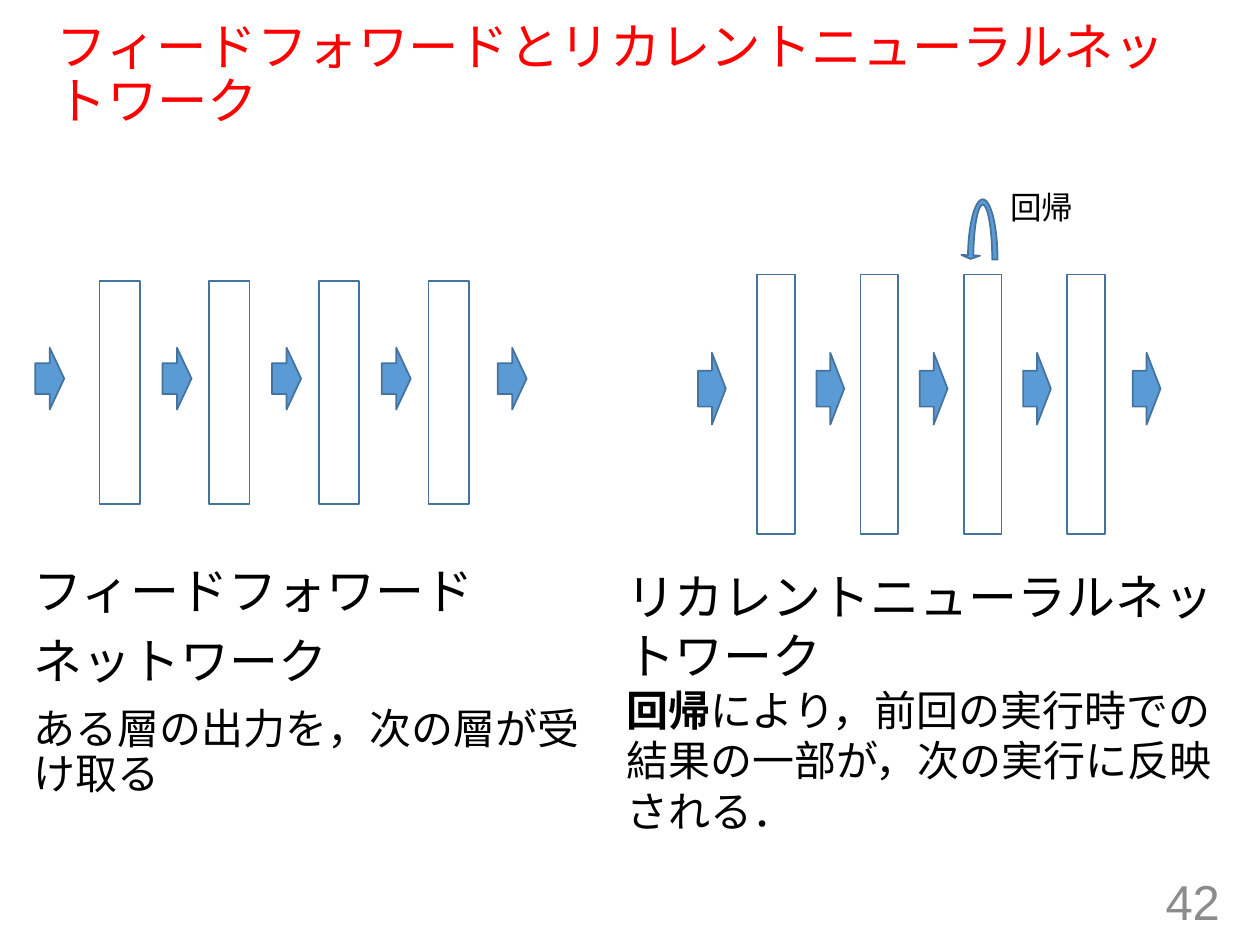
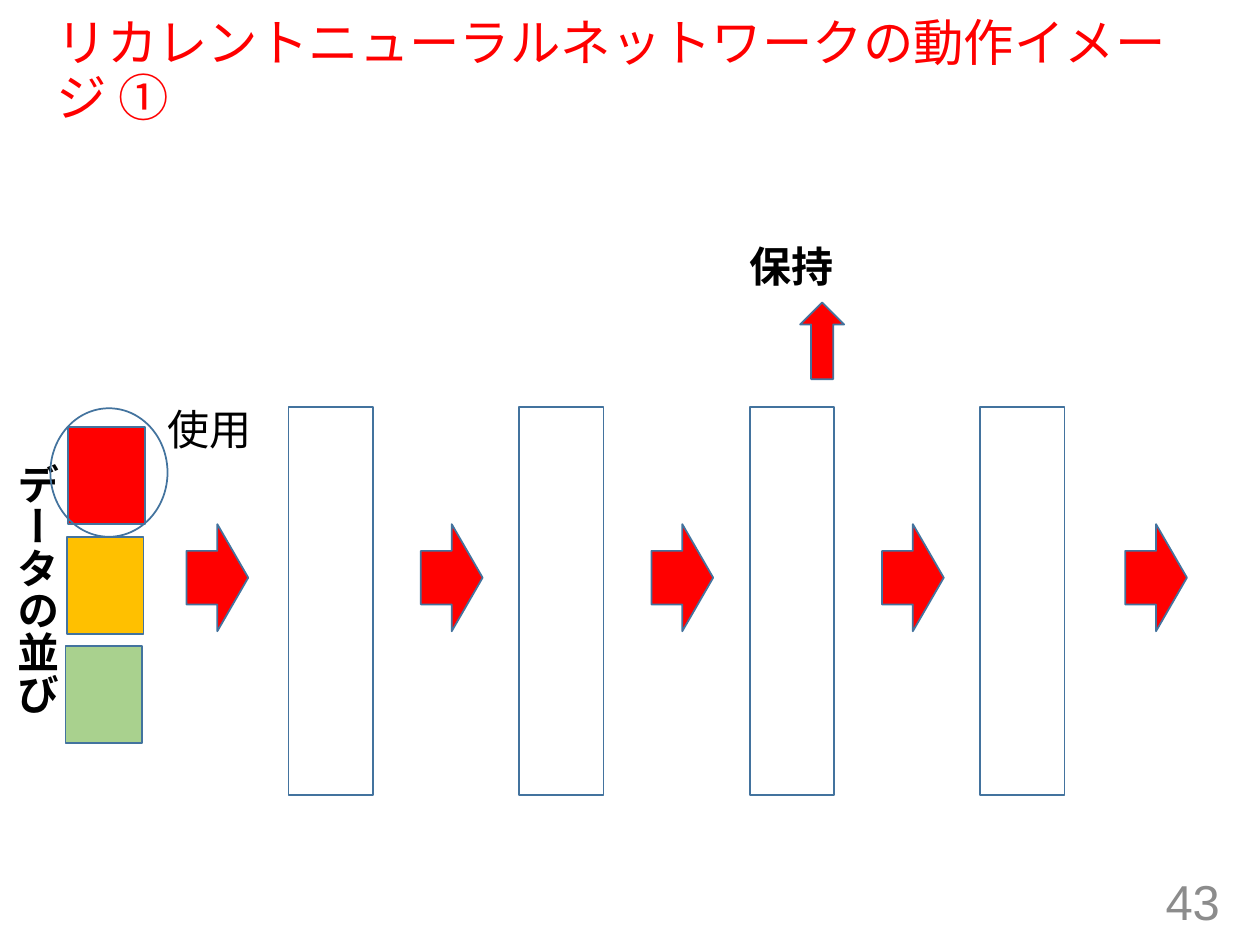
from dataclasses import dataclass

from lxml.etree import SubElement
from pptx import Presentation
from pptx.dml.color import RGBColor
from pptx.enum.shapes import MSO_SHAPE
from pptx.enum.text import MSO_ANCHOR, MSO_AUTO_SIZE, PP_ALIGN
from pptx.oxml.ns import qn
from pptx.util import Inches, Pt

RED = RGBColor(0xFF, 0x00, 0x00)
BLUE = RGBColor(0x5B, 0x9B, 0xD5)
OUTLINE = RGBColor(0x43, 0x73, 0x9E)
AMBER = RGBColor(0xFF, 0xC0, 0x00)
GREEN = RGBColor(0xA9, 0xD1, 0x8E)
BLACK = RGBColor(0x00, 0x00, 0x00)
GRAY = RGBColor(0x8C, 0x8C, 0x8C)

HEADING_FONT = "Arial"
BODY_FONT = "Calibri"
JAPANESE_FONT = "Noto Sans CJK JP"

COLUMNS, ROWS = 100, 75
CELL = Inches(0.1)
LAYER_COUNT = 4


@dataclass
class Words:
    text: str
    size: float
    font: str = BODY_FONT
    bold: bool = False
    color: RGBColor = BLACK


@dataclass
class Network:
    first_layer: float
    pitch: float
    layer_top: float
    layer_size: tuple
    input_arrow: float
    first_inner_arrow: float
    output_arrow: float
    arrow_top: float
    arrow_size: tuple
    arrow_color: RGBColor


def cells(*counts):
    return [round(count * CELL) for count in counts]


def format_run(run, words):
    font = run.font
    font.size = Pt(words.size)
    font.name = words.font
    font.bold = words.bold
    font.color.rgb = words.color
    SubElement(font._element, qn("a:ea")).set("typeface", JAPANESE_FONT)


def fill_paragraph(paragraph, runs):
    for words in runs:
        run = paragraph.add_run()
        run.text = words.text
        format_run(run, words)


def add_text(slide, place, paragraphs, wrap=True):
    text_frame = slide.shapes.add_textbox(*cells(*place)).text_frame
    text_frame.word_wrap = wrap
    for index, runs in enumerate(paragraphs):
        paragraph = text_frame.add_paragraph() if index else text_frame.paragraphs[0]
        fill_paragraph(paragraph, runs)
    return text_frame


def add_label(slide, place, words):
    text_frame = add_text(slide, place, [[words]], wrap=False)
    text_frame.auto_size = MSO_AUTO_SIZE.SHAPE_TO_FIT_TEXT
    return text_frame


def add_outlined(slide, kind, place, color=None):
    shape = slide.shapes.add_shape(kind, *cells(*place))
    shape.shadow.inherit = False
    shape.line.color.rgb = OUTLINE
    shape.line.width = Pt(1)
    if color is None:
        shape.fill.background()
    else:
        shape.fill.solid()
        shape.fill.fore_color.rgb = color
    return shape


def add_network(slide, network):
    for index in range(LAYER_COUNT):
        left = network.first_layer + index * network.pitch
        add_outlined(slide, MSO_SHAPE.RECTANGLE,
                     (left, network.layer_top, *network.layer_size))
    inner_arrows = [network.first_inner_arrow + index * network.pitch
                    for index in range(LAYER_COUNT - 1)]
    for left in [network.input_arrow, *inner_arrows, network.output_arrow]:
        add_outlined(slide, MSO_SHAPE.RIGHT_ARROW,
                     (left, network.arrow_top, *network.arrow_size),
                     network.arrow_color)


def add_recurrence(slide, place):
    shape = add_outlined(slide, MSO_SHAPE.CIRCULAR_ARROW, place, BLUE)
    for index, value in enumerate((0.125, 9.927, 204.577, 108, 0.217)):
        shape.adjustments[index] = value
    shape._element.spPr.xfrm.set("flipH", "1")


def add_titled_slide(presentation, title_text, title_rows, number):
    slide = presentation.slides.add_slide(presentation.slide_layouts[5])
    title = slide.shapes.title
    title.left, title.top, title.width, title.height = cells(3.5, 1.9, 92.5, title_rows)
    text_frame = title.text_frame
    text_frame.text = title_text
    text_frame.word_wrap = True
    text_frame.auto_size = MSO_AUTO_SIZE.NONE
    text_frame.vertical_anchor = MSO_ANCHOR.MIDDLE
    paragraph = text_frame.paragraphs[0]
    paragraph.alignment = PP_ALIGN.LEFT
    paragraph.line_spacing = 0.9
    format_run(paragraph.runs[0], Words(title_text, 28.8, HEADING_FONT, color=RED))

    number_frame = add_text(slide, (75.3, 69.5, 22.5, 4),
                            [[Words(number, 28, HEADING_FONT, color=GRAY)]])
    number_frame.vertical_anchor = MSO_ANCHOR.MIDDLE
    number_frame.paragraphs[0].alignment = PP_ALIGN.RIGHT
    return slide


def build_comparison(presentation):
    slide = add_titled_slide(
        presentation, "フィードフォワードとリカレントニューラルネットワーク", 8.3, "42")
    description = add_text(slide, (1.7, 44.5, 48.3, 20.3), [
        [Words("フィードフォワード", 28, HEADING_FONT)],
        [Words("ネットワーク", 28, HEADING_FONT)],
        [Words("ある層の出力を，次の層が受け取る", 24, JAPANESE_FONT)],
    ])
    for paragraph in description.paragraphs:
        paragraph.line_spacing = 0.9
        paragraph.space_before = Pt(10)

    add_network(slide, Network(
        first_layer=7.9, pitch=8.7, layer_top=22.3, layer_size=(3.2, 17.7),
        input_arrow=2.8, first_inner_arrow=12.9, output_arrow=39.5,
        arrow_top=27.6, arrow_size=(2.3, 4.9), arrow_color=BLUE))
    add_network(slide, Network(
        first_layer=60.1, pitch=8.2, layer_top=21.8, layer_size=(3, 20.6),
        input_arrow=55.4, first_inner_arrow=64.8, output_arrow=89.9,
        arrow_top=28, arrow_size=(2.2, 5.7), arrow_color=BLUE))
    add_recurrence(slide, (76.3, 15.3, 3.4, 10.6))

    add_text(slide, (48.7, 44.5, 50.1, 26.6), [
        [Words("リカレントニューラルネットワーク", 28, JAPANESE_FONT)],
        [Words("回帰", 24, JAPANESE_FONT, bold=True),
         Words("により，", 24, JAPANESE_FONT),
         Words("前回の実行時での結果の一部が，次の実行に反映される．", 24)],
    ])
    add_label(slide, (79.2, 14.4, 7.1, 4), Words("回帰", 18))


def build_first_step(presentation):
    slide = add_titled_slide(
        presentation, "リカレントニューラルネットワークの動作イメージ ①", 7.7, "43")
    add_network(slide, Network(
        first_layer=22.9, pitch=18.3, layer_top=32.3, layer_size=(6.7, 30.8),
        input_arrow=14.8, first_inner_arrow=33.4, output_arrow=89.3,
        arrow_top=41.6, arrow_size=(4.9, 8.5), arrow_color=RED))

    for index, color in enumerate((RED, AMBER, GREEN)):
        add_outlined(slide, MSO_SHAPE.RECTANGLE,
                     (5.4 - 0.1 * index, 33.9 + 8.7 * index, 6.1, 7.7), color)
    sequence = add_label(slide, (-0.7, 35.8, 6.1, 21.2),
                         Words("データの並び", 24, bold=True))
    sequence._txBody.bodyPr.set("vert", "eaVert")

    keep_arrow = add_outlined(slide, MSO_SHAPE.RIGHT_ARROW, (62.2, 25.3, 6.1, 3.5), RED)
    keep_arrow.rotation = 270
    add_label(slide, (58.5, 18.6, 8.8, 5), Words("保持", 24, bold=True))
    add_outlined(slide, MSO_SHAPE.OVAL, (4, 32.4, 9.3, 10.2))
    add_label(slide, (12.3, 31.5, 8.8, 5), Words("使用", 24))


def main():
    presentation = Presentation()
    presentation.slide_width, presentation.slide_height = cells(COLUMNS, ROWS)
    build_comparison(presentation)
    build_first_step(presentation)
    presentation.save("out.pptx")


if __name__ == "__main__":
    main()
